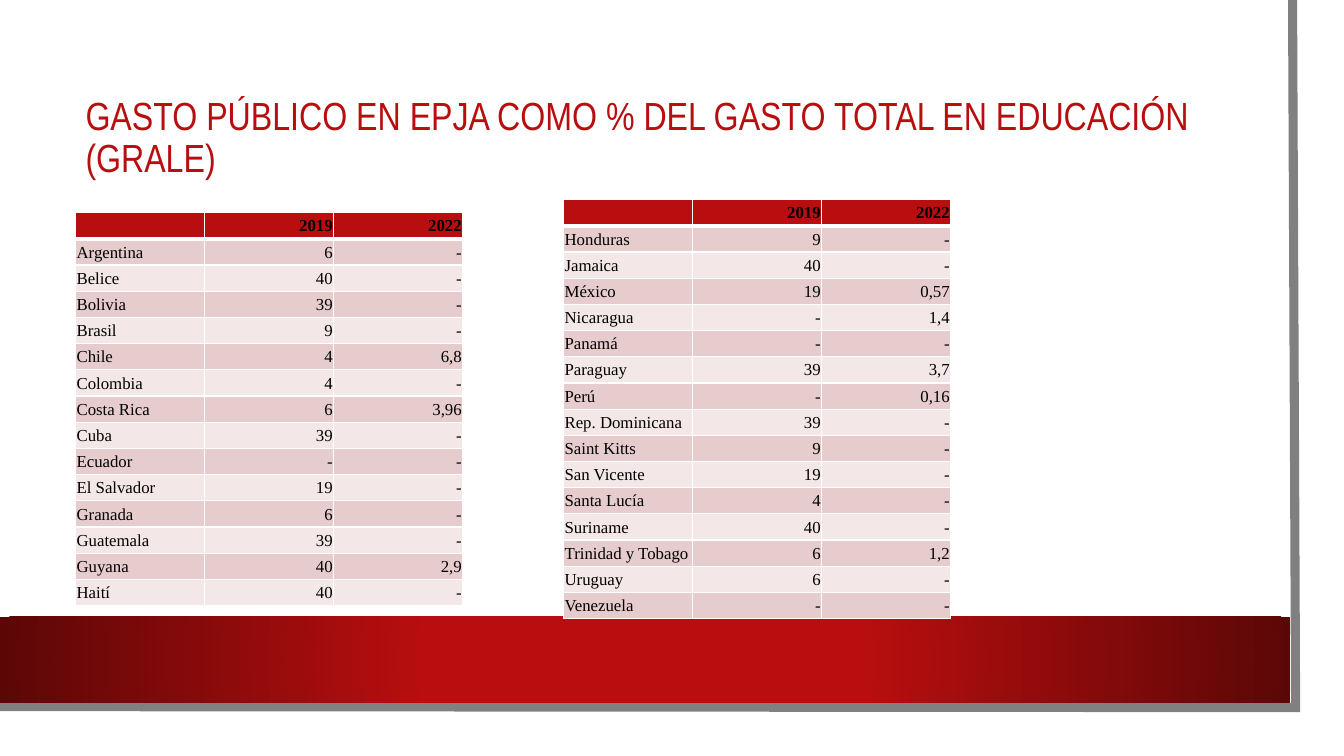
from lxml import etree
from pptx import Presentation
from pptx.dml.color import RGBColor
from pptx.enum.shapes import MSO_SHAPE
from pptx.enum.text import MSO_ANCHOR, PP_ALIGN
from pptx.oxml.ns import qn
from pptx.util import Inches, Pt

RECTANGLE = MSO_SHAPE.RECTANGLE
MIDDLE = MSO_ANCHOR.MIDDLE
RIGHT, JUSTIFY = PP_ALIGN.RIGHT, PP_ALIGN.JUSTIFY

COLORS = {
    "white": "FFFFFF",
    "black": "000000",
    "red": "B80E0F",
    "dark_red": "5C0707",
    "gray": "808080",
    "odd_row": "E6CCCC",
    "even_row": "F3E7E7",
}
HEADER = ("", "2019", "2022")
COLUMN_WIDTH, ROW_HEIGHT = 1.28, 0.26

TABLES = [
    (0.75, 2.11, [
        ("Argentina", "6", "-"),
        ("Belice", "40", "-"),
        ("Bolivia", "39", "-"),
        ("Brasil", "9", "-"),
        ("Chile", "4", "6,8"),
        ("Colombia", "4", "-"),
        ("Costa Rica", "6", "3,96"),
        ("Cuba", "39", "-"),
        ("Ecuador", "-", "-"),
        ("El Salvador", "19", "-"),
        ("Granada", "6", "-"),
        ("Guatemala", "39", "-"),
        ("Guyana", "40", "2,9"),
        ("Haití", "40", "-"),
    ]),
    (5.59, 1.98, [
        ("Honduras", "9", "-"),
        ("Jamaica", "40", "-"),
        ("México", "19", "0,57"),
        ("Nicaragua", "-", "1,4"),
        ("Panamá", "-", "-"),
        ("Paraguay", "39", "3,7"),
        ("Perú", "-", "0,16"),
        ("Rep. Dominicana", "39", "-"),
        ("Saint Kitts", "9", "-"),
        ("San Vicente", "19", "-"),
        ("Santa Lucía", "4", "-"),
        ("Suriname", "40", "-"),
        ("Trinidad y Tobago", "6", "1,2"),
        ("Uruguay", "6", "-"),
        ("Venezuela", "-", "-"),
    ]),
]


def color(name):
    return RGBColor.from_string(COLORS[name])


def add_borders(cell, top, bottom):
    """Draw white cell borders; top and bottom are widths in points."""
    properties = cell._tc.get_or_add_tcPr()
    for side, width in (("L", 1), ("R", 1), ("T", top), ("B", bottom)):
        line = etree.SubElement(properties, qn(f"a:ln{side}"), w=str(Pt(width)))
        fill = etree.SubElement(line, qn("a:solidFill"))
        etree.SubElement(fill, qn("a:srgbClr"), val=COLORS["white"])


deck = Presentation()
deck.slide_width, deck.slide_height = Inches(13.33), Inches(7.5)
page = deck.slides.add_slide(deck.slide_layouts[6])

# Sheet, gray edge and red band
sheet = page.shapes.add_shape(RECTANGLE, 0, 0, Inches(13.1), Inches(7.27))
sheet.shadow.inherit = False
sheet.fill.solid()
sheet.fill.fore_color.rgb = color("white")
sheet.line.fill.background()

builder = page.shapes.build_freeform(Inches(12.82), 0)
builder.add_line_segments(
    [(Inches(12.85), Inches(7.02)), (Inches(-0.03), Inches(7.01))], close=False)
edge = builder.convert_to_shape()
edge.shadow.inherit = False
edge.fill.background()
edge.line.color.rgb = color("gray")
edge.line.width = Pt(6.5)
etree.SubElement(edge.line._ln, qn("a:miter"), lim="800000")

band = page.shapes.add_shape(RECTANGLE, 0, Inches(6.12), Inches(12.8), Inches(0.85))
band.shadow.inherit = False
band.line.fill.background()
band.fill.gradient()
for stop, name, position in zip(band.fill.gradient_stops, ("red", "dark_red"), (0.34, 1)):
    stop.color.rgb = color(name)
    stop.position = position
gradient = band._element.spPr.find(qn("a:gradFill"))
linear = gradient.find(qn("a:lin"))
circle = etree.Element(qn("a:path"), path="circle")
etree.SubElement(circle, qn("a:fillToRect"), l="50000", t="50000", r="50000", b="50000")
gradient.replace(linear, circle)

# Title
title = page.shapes.add_textbox(Inches(0.75), Inches(0.75), Inches(11.37), Inches(1.26))
title.text_frame.word_wrap = True
title.text_frame.vertical_anchor = MIDDLE
title.text_frame.text = "GASTO PÚBLICO EN EPJA COMO % DEL GASTO TOTAL EN EDUCACIÓN (GRALE)"
para = title.text_frame.paragraphs[0]
para.line_spacing = 0.9
para.font.size = Pt(28)
para.font.name = "Arial Narrow"
para.font.color.rgb = color("red")

# Spending tables
for left, top, countries in TABLES:
    rows = [HEADER] + countries
    table = page.shapes.add_table(
        len(rows), len(HEADER), Inches(left), Inches(top),
        Inches(COLUMN_WIDTH * len(HEADER)), Inches(ROW_HEIGHT * len(rows))).table
    for column in table.columns:
        column.width = Inches(COLUMN_WIDTH)
    for row_index, values in enumerate(rows):
        table.rows[row_index].height = Inches(ROW_HEIGHT)
        is_header = row_index == 0
        fill_name = "red" if is_header else "odd_row" if row_index % 2 else "even_row"
        for column_index, value in enumerate(values):
            cell = table.cell(row_index, column_index)
            add_borders(cell, 3 if row_index == 1 else 1, 3 if is_header else 1)
            cell.fill.solid()
            cell.fill.fore_color.rgb = color(fill_name)
            cell.vertical_anchor = MIDDLE
            cell.margin_left = cell.margin_right = cell.margin_top = Inches(0.01)
            cell.margin_bottom = 0
            cell.text_frame.text = value
            para = cell.text_frame.paragraphs[0]
            para.alignment = RIGHT if column_index else JUSTIFY
            for span in para.runs:
                span.font.size = Pt(12)
                span.font.name = "Times New Roman"
                span.font.bold = is_header
                span.font.color.rgb = color("black")
            if not value:
                etree.SubElement(para._p, qn("a:endParaRPr"), sz="1200")

deck.save("out.pptx")
